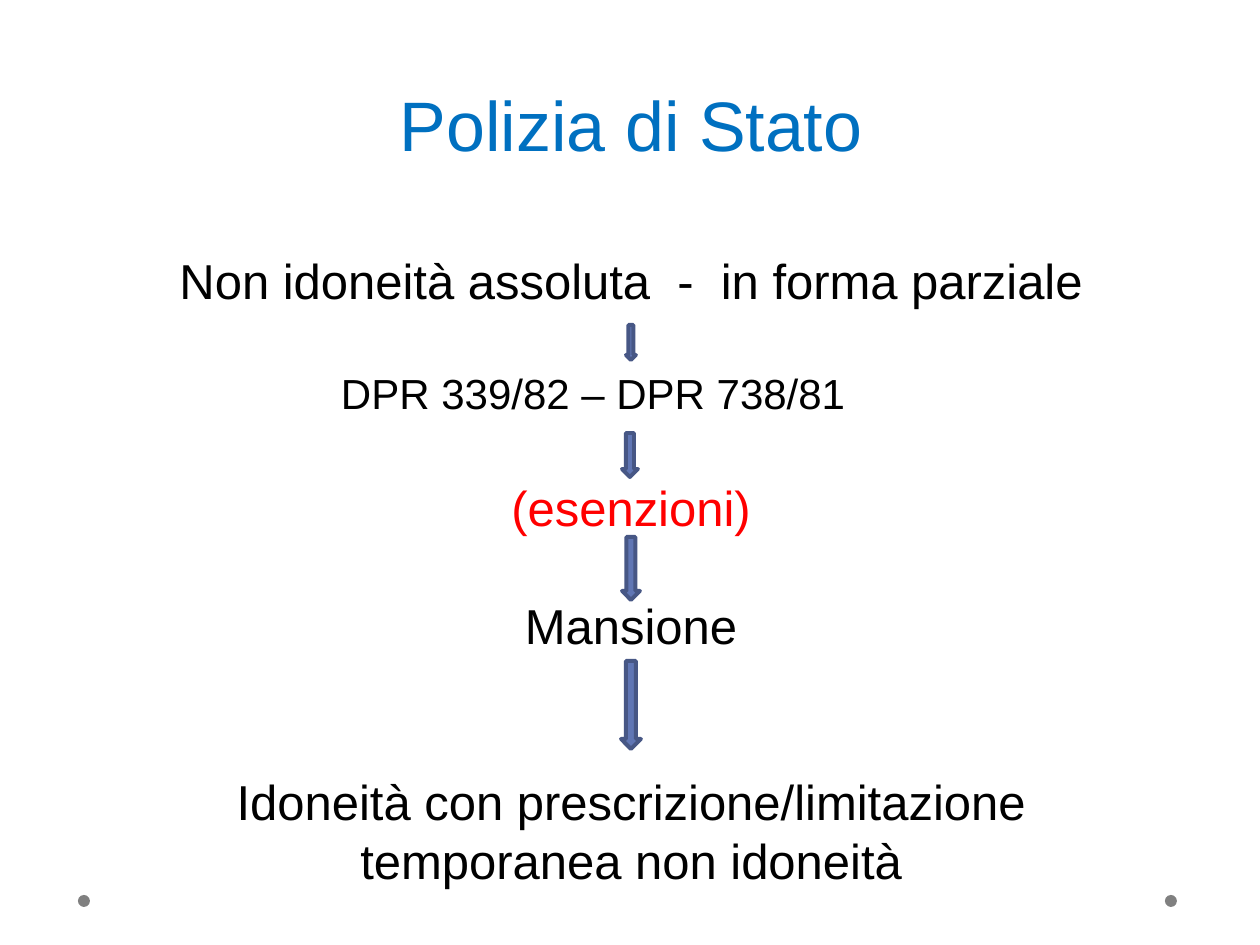
from lxml import etree
from pptx import Presentation
from pptx.dml.color import RGBColor
from pptx.enum.shapes import MSO_SHAPE
from pptx.enum.text import MSO_ANCHOR, MSO_AUTO_SIZE, PP_ALIGN
from pptx.oxml.ns import qn
from pptx.util import Emu, Pt

SCALE = 914400 // 126
OVAL = MSO_SHAPE.OVAL
DOWN = MSO_SHAPE.DOWN_ARROW
CENTER = PP_ALIGN.CENTER
LEFT = PP_ALIGN.LEFT
TOP = MSO_ANCHOR.TOP
FIXED = MSO_AUTO_SIZE.NONE

BLACK, RED, BLUE = "000000", "FF0000", "0070C0"
MID = 631
ROW = 59
STEPS = [
    ([("Non idoneità assoluta", 0), (" -", 780), (" in forma parziale", 0)], 28, BLACK, 0, 0),
    ([("DPR 339/82 – DPR 738/81", 0)], 24, BLACK, 1, 186),
    ([("(esenzioni)", 0)], 28, RED, 1, 0),
    ([("Mansione", 0)], 28, BLACK, 1, 0),
    ([("Idoneità con prescrizione/limitazione", 0)], 28, BLACK, 2, 0),
    ([("temporanea non idoneità", 0)], 28, BLACK, 0, 0),
]
ARROWS = [(MID, 325, 10, 35), (MID - 1, 433, 16, 44),
          (MID, 537, 18, 63), (MID, 661, 20, 88)]


def px(n):
    """Turn pixels into EMU."""
    return Emu(n * SCALE)


def color(code):
    """Turn a hex string into a colour."""
    return RGBColor.from_string(code)


def place(shape, left, top, width, height):
    """Move and size a placeholder, with no insets."""
    shape.left, shape.top = px(left), px(top)
    shape.width, shape.height = px(width), px(height)
    frame = shape.text_frame
    frame.margin_left = frame.margin_right = 0
    frame.margin_top = frame.margin_bottom = 0
    frame.word_wrap = True
    frame.auto_size = FIXED
    frame.vertical_anchor = TOP
    return frame


def write(para, runs, size, tint, align=CENTER):
    """Add runs of (text, letter spacing) to a paragraph."""
    para.alignment = align
    for text, gap in runs:
        run = para.add_run()
        run.text = text
        run.font.name = "Arial"
        run.font.size = Pt(size)
        run.font.color.rgb = color(tint)
        if gap:
            run.font._element.set("spc", str(gap))


def plain(para, left):
    """Turn off the bullet and set the left margin."""
    props = para._p.get_or_add_pPr()
    props.set("marL", str(px(left)))
    props.set("indent", "0")
    etree.SubElement(props, qn("a:buNone"))


def draw(slide, kind, box, fill, line=None):
    """Add a filled preset shape."""
    shape = slide.shapes.add_shape(kind, *map(px, box))
    shape.shadow.inherit = False
    shape.fill.solid()
    shape.fill.fore_color.rgb = color(fill)
    if line:
        shape.line.color.rgb = color(line)
        shape.line.width = Pt(2.25)
    else:
        shape.line.fill.background()


def steps(frame):
    """Write the steps, spaced by whole rows."""
    for i, (runs, size, tint, rows, left) in enumerate(STEPS):
        para = frame.add_paragraph() if i else frame.paragraphs[0]
        plain(para, left)
        para.line_spacing = 1.0
        para.space_before = px(rows * ROW)
        para.space_after = 0
        write(para, runs, size, tint, LEFT if left else CENTER)


def main():
    """Build the slide."""
    deck = Presentation()
    deck.slide_width, deck.slide_height = px(1260), px(945)
    slide = deck.slides.add_slide(deck.slide_layouts[1])
    for left in (78, 1165):
        draw(slide, OVAL, (left, 895, 12, 12), "808080")
    title = place(slide.shapes.title, 155, 82, 952, 82)
    write(title.paragraphs[0], [("Polizia di Stato", 0)], 40, BLUE)
    steps(place(slide.placeholders[1], 155, 250, 952, 650))
    for mid, top, width, height in ARROWS:
        box = (mid - width // 2, top, width, height)
        draw(slide, DOWN, box, "6076B4", "475785")
    deck.save("out.pptx")


if __name__ == "__main__":
    main()
